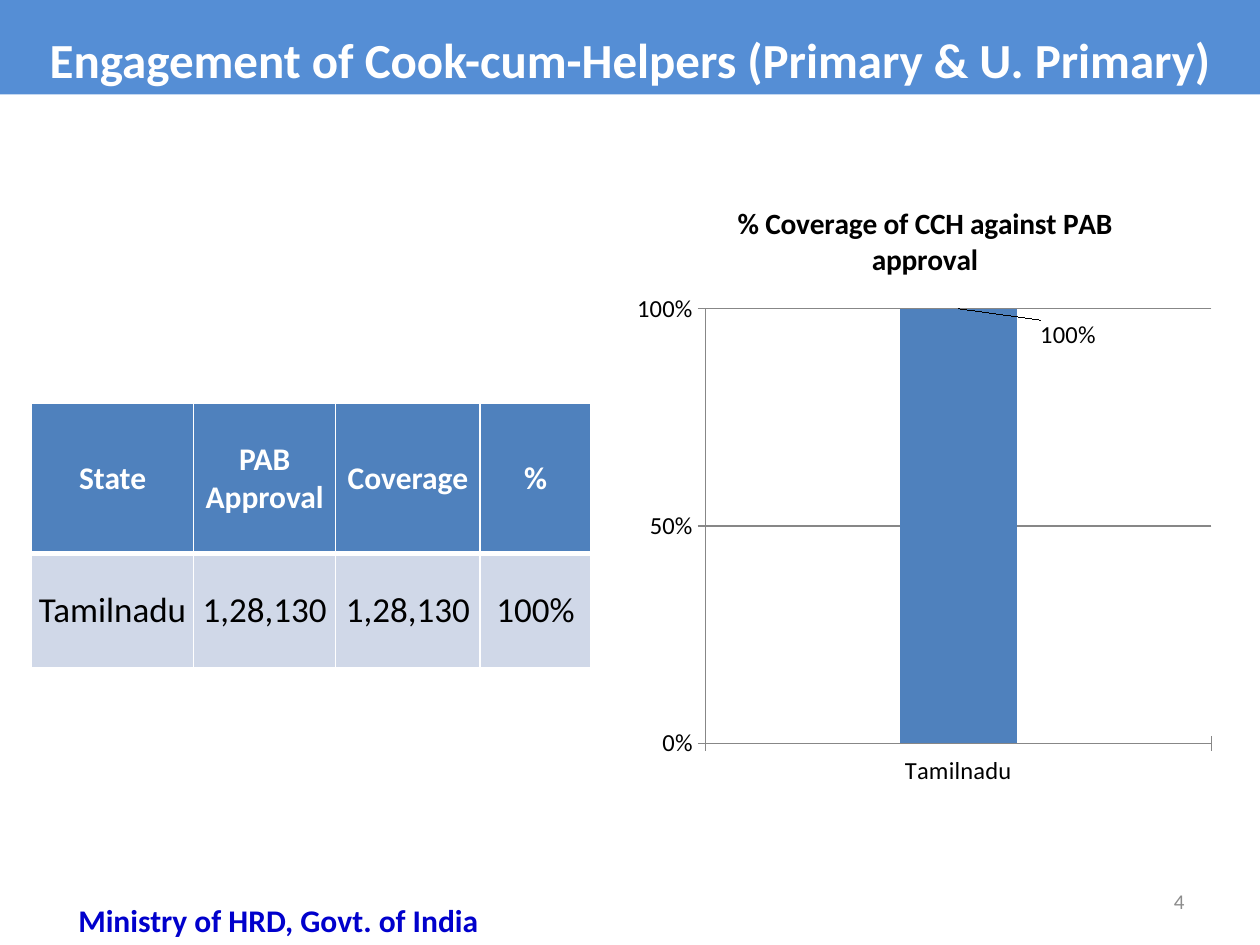
from lxml import etree
from pptx import Presentation
from pptx.chart.data import CategoryChartData
from pptx.dml.color import RGBColor
from pptx.enum.chart import XL_CHART_TYPE, XL_LABEL_POSITION, XL_TICK_MARK
from pptx.enum.shapes import MSO_SHAPE
from pptx.enum.text import MSO_ANCHOR, PP_ALIGN
from pptx.oxml import parse_xml
from pptx.oxml.ns import nsdecls, qn
from pptx.util import Inches, Pt

CENTER, RIGHT = PP_ALIGN.CENTER, PP_ALIGN.RIGHT
TOP, MIDDLE = MSO_ANCHOR.TOP, MSO_ANCHOR.MIDDLE
RECT = MSO_SHAPE.RECTANGLE
COLUMN = XL_CHART_TYPE.COLUMN_CLUSTERED
INSIDE_END = XL_LABEL_POSITION.INSIDE_END
CROSS = XL_TICK_MARK.CROSS
FONT = "Calibri"
WIDTH, HEIGHT = Inches(10), Inches(7.5)
COLS, ROWS = 100, 75
WHITE, BLACK, BLUE, GREY = "FFFFFF", "000000", "4F81BD", "878787"


def rgb(value):
    """Turn a hex string into a colour."""
    return RGBColor.from_string(value)


def place(col, row, cols, rows):
    """Turn grid columns and rows into a left, top, width, height box."""
    x, y = WIDTH / COLS, HEIGHT / ROWS
    return int(col * x), int(row * y), int(cols * x), int(rows * y)


def style_font(font, size, color=BLACK, bold=False):
    """Set the face, size, colour and weight of a font."""
    font.name, font.size, font.bold = FONT, Pt(size), bold
    font.color.rgb = rgb(color)


def write(tf, text, size, color, bold=False, align=CENTER):
    """Write one styled paragraph into a text frame."""
    tf.word_wrap = True
    p = tf.paragraphs[0]
    p.text, p.alignment = text, align
    style_font(p.font, size, color, bold)
    return p


def add_banner(slide, box, text):
    """Draw the title band."""
    sp = slide.shapes.add_shape(RECT, *box)
    sp.shadow.inherit = False
    sp.fill.solid()
    sp.fill.fore_color.rgb = rgb("558ED5")
    sp.line.fill.background()
    sp.text_frame.vertical_anchor = MIDDLE
    write(sp.text_frame, text, 28, WHITE, True).line_spacing = 1.4


def add_label(slide, box, text, size, color, bold=False, align=CENTER, anchor=TOP):
    """Place a line of text."""
    tf = slide.shapes.add_textbox(*box).text_frame
    tf.vertical_anchor = anchor
    write(tf, text, size, color, bold, align)


def set_borders(cell, bottom):
    """Give a cell white borders with the given bottom width in points."""
    tc_pr = cell._tc.get_or_add_tcPr()
    for i, (side, width) in enumerate(zip("LRTB", (1, 1, 1, bottom))):
        tc_pr.insert(i, parse_xml(
            f'<a:ln{side} {nsdecls("a")} w="{Pt(width)}"><a:solidFill>'
            f'<a:srgbClr val="{WHITE}"/></a:solidFill></a:ln{side}>'))


def add_coverage_table(slide, box, rows, col_shares, row_shares):
    """Build the coverage table with a header row."""
    table = slide.shapes.add_table(len(rows), len(rows[0]), *box).table
    for column, share in zip(table.columns, col_shares):
        column.width = int(box[2] * share / sum(col_shares))
    for row, share in zip(table.rows, row_shares):
        row.height = int(box[3] * share / sum(row_shares))
    looks = [(BLUE, 18, WHITE, True, 3), ("D0D8E8", 20, BLACK, False, 1)]
    for r, (values, look) in enumerate(zip(rows, looks)):
        fill, size, color, bold, bottom = look
        for c, value in enumerate(values):
            cell = table.cell(r, c)
            cell.margin_left = cell.margin_right = 0
            cell.margin_top = cell.margin_bottom = 0
            cell.vertical_anchor = MIDDLE
            cell.fill.solid()
            cell.fill.fore_color.rgb = rgb(fill)
            write(cell.text_frame, value, size, color, bold)
            set_borders(cell, bottom)


def manual_layout(**values):
    """Build a manual chart layout element."""
    layout = parse_xml(f'<c:layout {nsdecls("c")}><c:manualLayout/></c:layout>')
    for tag, value in values.items():
        etree.SubElement(layout[0], qn(f"c:{tag}")).set("val", str(value))
    return layout


def style_axis(axis):
    """Give an axis its line, ticks and labels."""
    axis.format.line.color.rgb = rgb(GREY)
    axis.major_tick_mark = CROSS
    style_font(axis.tick_labels.font, 14)


def add_coverage_chart(slide, box, title, category, value):
    """Build the column chart of coverage."""
    data = CategoryChartData(number_format="0%")
    data.categories = [category]
    data.add_series("Series 1", [value])
    chart = slide.shapes.add_chart(COLUMN, *box, data).chart
    style_font(chart.font, 14)
    chart.has_legend = False
    chart.has_title = True
    style_font(write(chart.chart_title.text_frame, title, 16.8, BLACK, True).runs[0].font,
               16.8, BLACK, True)
    chart.chart_title.include_in_layout = False

    style_axis(chart.category_axis)
    axis = chart.value_axis
    style_axis(axis)
    axis.minimum_scale, axis.maximum_scale, axis.major_unit = 0, 1, 0.5
    axis.tick_labels.number_format = "0%"
    axis.tick_labels.number_format_is_linked = False
    axis.major_gridlines.format.line.color.rgb = rgb(GREY)

    plot = chart.plots[0]
    plot.gap_width, plot.vary_by_categories = 330, False
    series = plot.series[0]
    series.format.fill.solid()
    series.format.fill.fore_color.rgb = rgb(BLUE)
    labels = series.data_labels
    labels.show_value = True
    labels.number_format, labels.number_format_is_linked = "0%", False
    style_font(labels.font, 14)

    label = series.points[0].data_label
    style_font(label.font, 14)
    label.position = INSIDE_END
    idx = label.font._element.getroottree().find(f".//{qn('c:dLbl')}/{qn('c:idx')}")
    number = parse_xml(f'<c:numFmt {nsdecls("c")} formatCode="0%" sourceLinked="0"/>')
    idx.addnext(number)
    idx.addnext(manual_layout(x=0.18, y=0.01))

    area = chart._chartSpace.chart.plotArea
    for old in area.findall(qn("c:layout")):
        area.remove(old)
    area.insert(0, manual_layout(layoutTarget="inner", xMode="edge", yMode="edge",
                                 x=0.14, y=0.2, w=0.83, h=0.67))


def main():
    """Build and save the slide."""
    prs = Presentation()
    prs.slide_width, prs.slide_height = WIDTH, HEIGHT
    slide = prs.slides.add_slide(prs.slide_layouts[6])
    add_banner(slide, place(0, 0, COLS, 7.5),
               "Engagement of Cook-cum-Helpers (Primary & U. Primary)")
    add_coverage_table(slide, place(2.5, 32, 44.4, 21),
                       [("State", "PAB Approval", "Coverage", "%"),
                        ("Tamilnadu", "1,28,130", "1,28,130", "100%")],
                       (1.29, 1.13, 1.15, 0.88), (1.2, 0.91))
    add_coverage_chart(slide, place(49.2, 14.2, 48.4, 51.5),
                       "% Coverage of CCH against PAB approval", "Tamilnadu", 1)
    add_label(slide, place(71.7, 69.5, 23.3, 4), "4", 12, "8C8C8C",
              align=RIGHT, anchor=MIDDLE)
    add_label(slide, place(2.5, 71, 39.2, 4), "Ministry of HRD, Govt. of India",
              18, "0000CC", True)
    prs.save("out.pptx")


if __name__ == "__main__":
    main()
